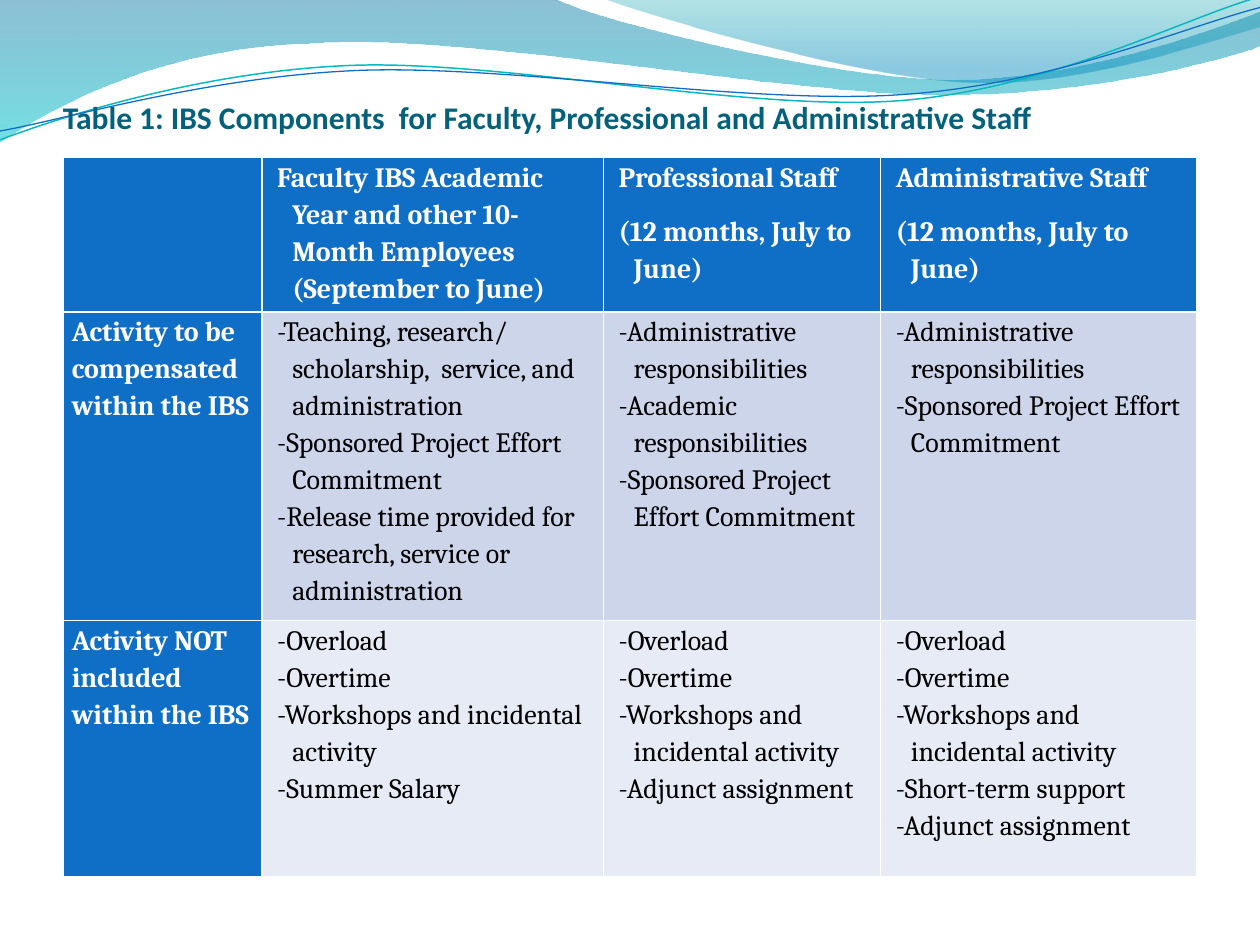
from math import cos, radians, sin

from lxml.etree import SubElement
from pptx import Presentation
from pptx.dml.color import RGBColor
from pptx.enum.text import MSO_ANCHOR
from pptx.oxml.ns import qn
from pptx.util import Inches, Pt

BLUE, WHITE, BLACK, TEAL = "0F6FC6", "FFFFFF", "000000", "04617B"
ROW_FILLS = [BLUE, "CCD5EA", "E7EBF5"]
COLUMN_WIDTHS = [1.58, 2.71, 2.2, 2.51]
ROW_HEIGHTS = [0.83, 2.37, 2.03]
LINE_TILT = 2.7

TITLE = "Table 1: IBS Components  for Faculty, Professional and Administrative Staff"
MONTHS = "(12 months, July to June)"
ADMINISTRATIVE = "-Administrative responsibilities"
SPONSORED = "-Sponsored Project Effort Commitment"
EXTRA_WORK = ["-Overload", "-Overtime", "-Workshops and incidental activity"]
ADJUNCT = "-Adjunct assignment"
ROWS = [
    [
        [],
        ["Faculty IBS Academic Year and other 10-Month Employees (September to June)"],
        ["Professional Staff", MONTHS],
        ["Administrative Staff", MONTHS],
    ],
    [
        ["Activity to be compensated within the IBS"],
        [
            "-Teaching, research/ scholarship,  service, and administration",
            SPONSORED,
            "-Release time provided for research, service or administration",
        ],
        [ADMINISTRATIVE, "-Academic responsibilities", SPONSORED],
        [ADMINISTRATIVE, SPONSORED],
    ],
    [
        ["Activity NOT included within the IBS"],
        EXTRA_WORK + ["-Summer Salary"],
        EXTRA_WORK + [ADJUNCT],
        EXTRA_WORK + ["-Short-term support", ADJUNCT],
    ],
]

LEFT_WAVE = [
    [(0, 0)], [(4.4, -0.01)],
    [(4.76, 0.17), (6.64, 0.63), (7.58, 0.63)],
    [(8.53, 0.63), (9.58, 0.26), (10, 0.09)],
    [(10.01, 0.36)],
    [(9.83, 0.44), (8.7, 0.76), (7.46, 0.75)],
    [(6.22, 0.75), (3.82, 0.28), (2.57, 0.34)],
    [(1.29, 0.36), (0.46, 0.83), (-0.01, 1.13)],
]
RIGHT_WAVE = [
    [(4.79, -0.01)],
    [(5.09, 0.11), (6.82, 0.62), (7.69, 0.65)],
    [(8.56, 0.69), (9.61, 0.32), (10, 0.21)],
    [(10, 0)],
]
TEAL_LINE = [
    [(0, 1.11)],
    [(0.48, 0.93), (1.58, 0.57), (2.77, 0.52)],
    [(3.95, 0.47), (5.93, 0.89), (7.13, 0.8)],
    [(8.33, 0.71), (9.38, 0.15), (9.98, -0.02)],
]
BLUE_LINE = [
    [(0, 1.04)],
    [(0.47, 0.96), (1.64, 0.61), (2.83, 0.56)],
    [(4.03, 0.51), (5.97, 0.84), (7.17, 0.75)],
    [(8.36, 0.67), (9.41, 0.21), (10, 0.06)],
]


def color(value):
    return RGBColor.from_string(value)


def turn(point, center, degrees):
    x, y = point[0] - center[0], point[1] - center[1]
    c, s = cos(radians(degrees)), sin(radians(degrees))
    return center[0] + x * c - y * s, center[1] + x * s + y * c


class SlideBuilder:
    heading_font = "Calibri"
    body_font = "Cambria"

    def __init__(self, page):
        self.page = page

    def outline(self, segments, closed):
        segments = [[(Inches(x), Inches(y)) for x, y in points] for points in segments]
        ends = [points[-1] for points in segments]
        builder = self.page.shapes.build_freeform(*ends[0])
        builder.add_line_segments(ends[1:], close=closed)
        shape = builder.convert_to_shape()
        shape.shadow.inherit = False
        lines = list(shape._element.spPr.iter(qn("a:lnTo")))
        for line, points in zip(lines, segments[1:]):
            if len(points) == 3:
                bend = SubElement(line.getparent(), qn("a:cubicBezTo"))
                for x, y in points:
                    SubElement(bend, qn("a:pt"), x=str(x - shape.left), y=str(y - shape.top))
                line.getparent().replace(line, bend)
        return shape

    def wave(self, segments, stops):
        shape = self.outline(segments, True)
        shape.line.fill.background()
        shape.fill.gradient()
        shape.fill.gradient_angle = 270
        for stop, (position, value, _) in zip(shape.fill.gradient_stops, stops):
            stop.position = position
            stop.color.rgb = color(value)
        for node, (_, _, opacity) in zip(shape._element.spPr.iter(qn("a:srgbClr")), stops):
            SubElement(node, qn("a:alpha"), val=str(opacity * 1000))

    def curve(self, segments, center, value, width):
        level = [[turn(point, center, LINE_TILT) for point in points] for points in segments]
        shape = self.outline(level, False)
        shape.rotation = 360 - LINE_TILT
        shape.fill.background()
        shape.line.color.rgb = color(value)
        shape.line.width = Pt(width)

    def format(self, para, font, size, value, bold):
        for span in para.runs:
            span.font.name = font
            span.font.size = Pt(size)
            span.font.color.rgb = color(value)
            span.font.bold = bold

    def title(self, text, left, top, width, height):
        box = self.page.shapes.add_textbox(*map(Inches, (left, top, width, height)))
        frame = box.text_frame
        frame.word_wrap = True
        frame.vertical_anchor = MSO_ANCHOR.BOTTOM
        frame.margin_left = frame.margin_right = frame.margin_bottom = 0
        frame.text = text
        self.format(frame.paragraphs[0], self.heading_font, 18, TEAL, True)

    def cell(self, cell, lines, row, column):
        heading = row == 0 or column == 0
        cell.fill.solid()
        cell.fill.fore_color.rgb = color(BLUE if heading else ROW_FILLS[row])
        if not lines:
            return
        cell.margin_left = cell.margin_right = Inches(0.07)
        cell.margin_top = cell.margin_bottom = 0
        cell.text_frame.text = "\n".join(lines)
        for para in cell.text_frame.paragraphs:
            para.line_spacing = 1.15
            if column:
                properties = para._p.get_or_add_pPr()
                properties.set("marL", str(Inches(0.17)))
                properties.set("indent", str(Inches(-0.12)))
            self.format(para, self.body_font, 16, WHITE if heading else BLACK, heading)
        if row == 0 and len(lines) > 1:
            cell.text_frame.paragraphs[0].space_after = Pt(10)

    def table(self, rows, left, top):
        size = sum(COLUMN_WIDTHS), sum(ROW_HEIGHTS)
        table = self.page.shapes.add_table(
            len(rows), len(rows[0]), *map(Inches, (left, top, *size))
        ).table
        table.first_col = True
        for column, width in zip(table.columns, COLUMN_WIDTHS):
            column.width = Inches(width)
        for row, height in zip(table.rows, ROW_HEIGHTS):
            row.height = Inches(height)
        for row, cells in enumerate(rows):
            for column, lines in enumerate(cells):
                self.cell(table.cell(row, column), lines, row, column)


def main():
    deck = Presentation()
    deck.slide_width, deck.slide_height = Inches(10), Inches(7.5)
    builder = SlideBuilder(deck.slides.add_slide(deck.slide_layouts[6]))
    builder.wave(LEFT_WAVE, [(0, "0074A1", 45), (1, "00C6CF", 55)])
    builder.wave(RIGHT_WAVE, [(0, "00A1A9", 30), (0.8, "008BBF", 45)])
    builder.curve(TEAL_LINE, (4.99, 0.57), "0AB8BF", 0.85)
    builder.curve(BLUE_LINE, (5, 0.59), BLUE, 0.75)
    builder.title(TITLE, 0.5, 0.77, 9, 0.31)
    builder.table(ROWS, 0.5, 1.25)
    deck.save("out.pptx")


if __name__ == "__main__":
    main()
